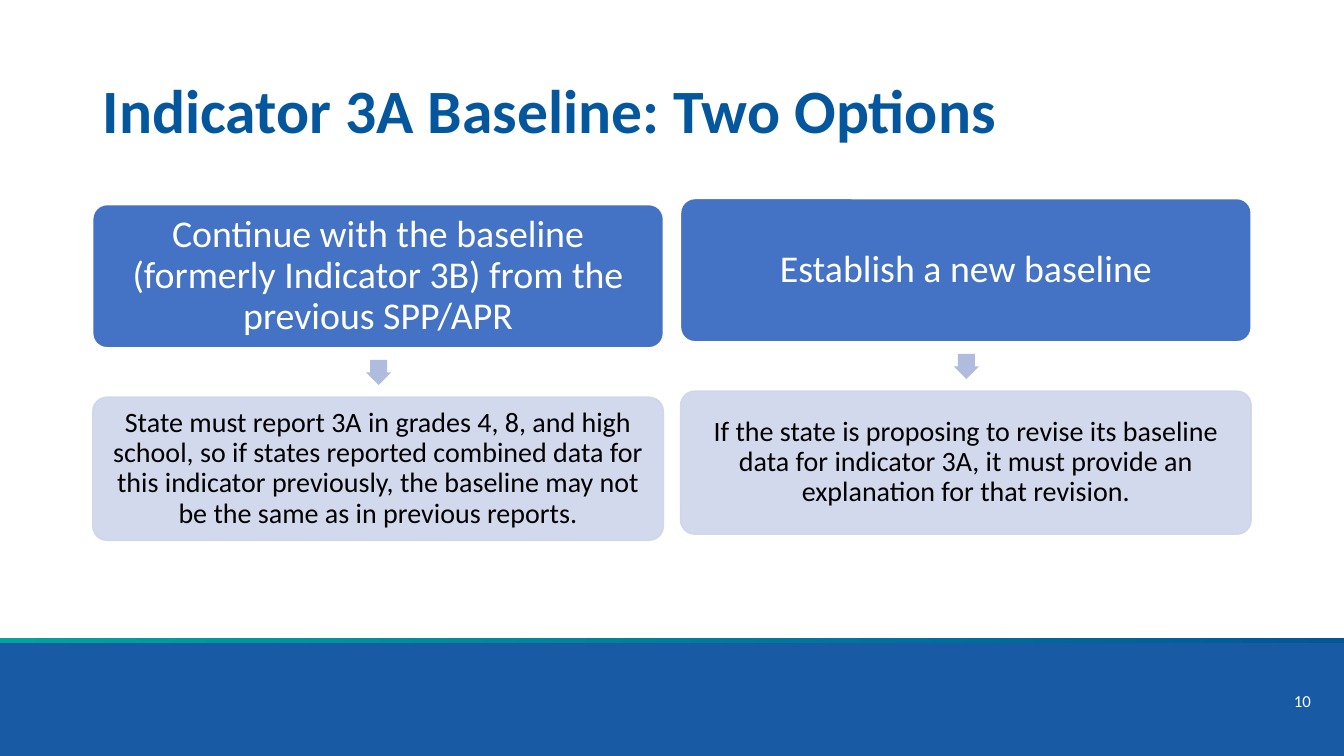
import pptx
import pptx.util
import pptx.dml.color
import pptx.enum.shapes
import pptx.enum.text
import pptx.oxml.ns
import lxml.etree

PX = 9144  # EMU per px, 100 px to the inch
KIND = pptx.enum.shapes.MSO_SHAPE
ALIGN = pptx.enum.text.PP_ALIGN

OPTIONS = [
    (92, 203,
     "Continue with the baseline (formerly Indicator 3B) from the previous SPP/APR",
     "State must report 3A in grades 4, 8, and high school, so if states reported "
     "combined data for this indicator previously, the baseline may not be the same "
     "as in previous reports."),
    (675, 197,
     "Establish a new baseline",
     "If the state is proposing to revise its baseline data for indicator 3A, it must "
     "provide an explanation for that revision."),
]


def px(*sizes):
    return [pptx.util.Emu(size * PX) for size in sizes]


def rgb(code):
    return pptx.dml.color.RGBColor.from_string(code)


def fade(fill, percent):
    """Make a solid fill partly transparent."""
    color = fill._xPr.find(".//" + pptx.oxml.ns.qn("a:srgbClr"))
    alpha = lxml.etree.SubElement(color, pptx.oxml.ns.qn("a:alpha"))
    alpha.set("val", str(percent * 1000))


def write(shape, text, size, color, align, inset=None, bold=False, lead=0.9):
    frame = shape.text_frame
    frame.text = text
    frame.word_wrap = True
    frame.auto_size = pptx.enum.text.MSO_AUTO_SIZE.NONE
    frame.vertical_anchor = pptx.enum.text.MSO_ANCHOR.MIDDLE
    if inset is not None:
        frame.margin_left = frame.margin_right = px(inset)[0]
        frame.margin_top = frame.margin_bottom = px(inset)[0]
    para = frame.paragraphs[0]
    para.alignment = align
    para.line_spacing = lead
    para.font.name = "Calibri"
    para.font.size = pptx.util.Pt(size)
    para.font.bold = bold
    para.font.color.rgb = rgb(color)


def draw(slide, kind, box, fill, line=None, adjust=()):
    shape = slide.shapes.add_shape(kind, *px(*box))
    shape.shadow.inherit = False
    shape.fill.solid()
    shape.fill.fore_color.rgb = rgb(fill)
    if line:
        shape.line.color.rgb = rgb(line)
        shape.line.width = pptx.util.Pt(1)
    else:
        shape.line.fill.background()
    for spot, value in enumerate(adjust):
        shape.adjustments[spot] = value
    return shape


def footer(slide):
    stripe = draw(slide, KIND.RECTANGLE, (0, 633, 1333, 5), "005899")
    stripe.fill.gradient()
    stripe.fill.gradient_angle = 180
    for stop, color in zip(stripe.fill.gradient_stops, ("005899", "00A59B")):
        stop.color.rgb = rgb(color)
    draw(slide, KIND.RECTANGLE, (0, 638, 1333, 112), "185AA3")
    number = slide.shapes.add_textbox(*px(1263, 667, 47, 56))
    write(number, "10", 12, "FFFFFF", ALIGN.RIGHT, lead=1.0)


def option(slide, left, top, head, detail):
    wide, high = 566, 142
    # Choice
    card = draw(slide, KIND.ROUNDED_RECTANGLE, (left, top, wide, high),
                "4472C4", "FFFFFF", [0.1])
    write(card, head, 27, "FFFFFF", ALIGN.CENTER, 4)
    # Arrow down
    arrow = draw(slide, KIND.RIGHT_ARROW, (left + 271, top + 154, 25, 25),
                 "B0BCDE", adjust=[0.67, 0.5])
    arrow.rotation = 90
    # What it means
    card = draw(slide, KIND.ROUNDED_RECTANGLE, (left, top + 191, wide, high),
                "CFD5EA", "CFD5EA", [0.1])
    fade(card.fill, 90)
    fade(card.line.fill, 90)
    write(card, detail, 20, "000000", ALIGN.CENTER, 3)


def main():
    deck = pptx.Presentation()
    deck.slide_width, deck.slide_height = px(1333, 750)
    slide = deck.slides.add_slide(deck.slide_layouts[5])

    # Title
    title = slide.shapes.title
    title.left, title.top, title.width, title.height = px(92, 40, 1150, 145)
    write(title, "Indicator 3A Baseline: Two Options", 44, "05579D",
          ALIGN.LEFT, bold=True)

    footer(slide)
    for item in OPTIONS:
        option(slide, *item)
    deck.save("out.pptx")


if __name__ == "__main__":
    main()
